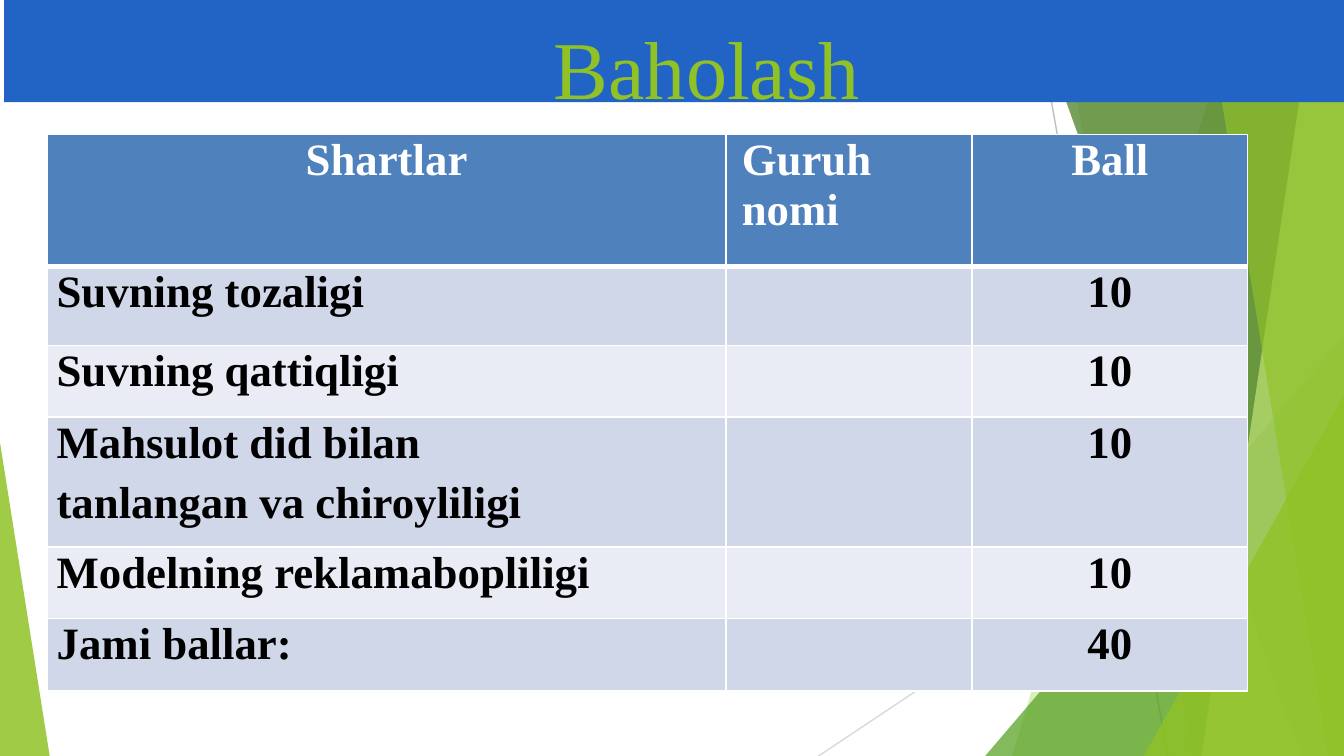
import pptx
import pptx.dml.color
import pptx.enum.shapes
import pptx.enum.text
import pptx.oxml.ns
import pptx.util
from pptx.dml.color import RGBColor
from pptx.util import Cm

FONT = "Times New Roman"
WHITE = RGBColor(0xFF, 0xFF, 0xFF)
BLACK = RGBColor(0x00, 0x00, 0x00)
BLUE = RGBColor(0x22, 0x64, 0xC6)
HEADER_BLUE = RGBColor(0x4F, 0x81, 0xBC)
BANDS = [RGBColor(0xD0, 0xD7, 0xE8), RGBColor(0xE9, 0xEC, 0xF4)]
LIME = RGBColor(0x90, 0xC2, 0x26)
GREEN = RGBColor(0x54, 0xA0, 0x21)
DARK_GREEN = RGBColor(0x3F, 0x78, 0x19)
PALE_GREEN = RGBColor(0xC0, 0xE4, 0x74)
GREY = RGBColor(0xBF, 0xBF, 0xBF)
LIGHT_GREY = RGBColor(0xD9, 0xD9, 0xD9)

WIDTH, HEIGHT = 25.4, 14.29

HEADINGS = ["Shartlar", "Guruh nomi", "Ball"]
CRITERIA = [
    ("Suvning tozaligi", "10"),
    ("Suvning qattiqligi", "10"),
    ("Mahsulot did bilan\ntanlangan va chiroyliligi", "10"),
    ("Modelning reklamabopliligi", "10"),
    ("Jami ballar:", "40"),
]
COLUMN_WIDTHS = [12.83, 4.65, 5.21]
ROW_HEIGHTS = [2.49, 1.5, 1.35, 2.46, 1.35, 1.37]


def add_child(parent, tag, **attributes):
    child = parent.makeelement(pptx.oxml.ns.qn(tag), attributes)
    parent.append(child)
    return child


def paint(shape, color, opacity=100):
    shape.shadow.inherit = False
    shape.line.fill.background()
    shape.fill.solid()
    shape.fill.fore_color.rgb = color
    if opacity < 100:
        color_element = shape.element.spPr.find(".//" + pptx.oxml.ns.qn("a:srgbClr"))
        add_child(color_element, "a:alpha", val=str(opacity * 1000))


def add_line(slide, x1, y1, x2, y2, color):
    line = slide.shapes.add_connector(
        pptx.enum.shapes.MSO_CONNECTOR.STRAIGHT, Cm(x1), Cm(y1), Cm(x2), Cm(y2))
    line.line.color.rgb = color
    line.line.width = pptx.util.Pt(0.75)
    add_child(line.element.spPr, "a:effectLst")


def add_wedge(slide, top_x, bottom_x, color, opacity):
    """Full-height panel with a slanted left side, reaching the right slide edge."""
    builder = slide.shapes.build_freeform(Cm(top_x), Cm(0))
    corners = [(WIDTH, 0), (WIDTH, HEIGHT), (bottom_x, HEIGHT)]
    builder.add_line_segments([(Cm(x), Cm(y)) for x, y in corners])
    paint(builder.convert_to_shape(), color, opacity)


def add_triangle(slide, left, top, width, apex, color, opacity):
    """Triangle standing on the bottom slide edge; apex is 0 for left, 1 for right."""
    triangle = slide.shapes.add_shape(
        pptx.enum.shapes.MSO_SHAPE.ISOSCELES_TRIANGLE,
        Cm(left), Cm(top), Cm(width), Cm(HEIGHT - top))
    triangle.adjustments[0] = apex
    paint(triangle, color, opacity)


def add_backdrop(slide):
    add_line(slide, 19.53, 0, 22.07, HEIGHT, GREY)
    add_line(slide, WIDTH, 7.67, 15.47, HEIGHT, LIGHT_GREY)
    add_wedge(slide, 23.39, 19.13, LIME, 30)
    add_wedge(slide, 20.02, 22.53, LIME, 20)
    add_triangle(slide, 18.62, 6.35, 6.78, 1, GREEN, 72)
    add_wedge(slide, 19.46, 24.59, DARK_GREEN, 70)
    add_wedge(slide, 24.84, 22.71, PALE_GREEN, 70)
    add_wedge(slide, 22.78, 25.1, LIME, 65)
    add_triangle(slide, 21.62, 7.47, 3.78, 1, LIME, 80)
    add_triangle(slide, 0, 8.36, 0.94, 0, LIME, 85)


def format_paragraph(paragraph, size, color, bold, space_before):
    paragraph.space_before = pptx.util.Pt(space_before)
    for run in paragraph.runs:
        run.font.name = FONT
        run.font.size = pptx.util.Pt(size)
        run.font.bold = bold
        run.font.color.rgb = color


def set_borders(cell, top, bottom):
    properties = cell._tc.get_or_add_tcPr()
    for side, points in (("L", 1), ("R", 1), ("T", top), ("B", bottom)):
        border = add_child(properties, "a:ln" + side, w=str(pptx.util.Pt(points)))
        fill = add_child(border, "a:solidFill")
        add_child(fill, "a:srgbClr", val=str(WHITE))


def fill_cell(cell, text, row, column):
    is_header = row == 0
    set_borders(cell, 3 if row == 1 else 1, 3 if is_header else 1)
    cell.fill.solid()
    cell.fill.fore_color.rgb = HEADER_BLUE if is_header else BANDS[(row - 1) % 2]
    cell.margin_left = cell.margin_right = cell.margin_bottom = 0
    cell.margin_top = Cm(0.03)
    if not text:
        return
    cell.text_frame.text = text
    centred = column == 2 or (is_header and column == 0)
    if not centred:
        cell.margin_left = Cm(0.3 if is_header else 0.18)
    if is_header and column == 1:
        cell.margin_right = Cm(0.8)
    for index, paragraph in enumerate(cell.text_frame.paragraphs):
        format_paragraph(paragraph, 24, WHITE if is_header else BLACK, True,
                         5.7 if index else 1.3)
        if centred:
            paragraph.alignment = pptx.enum.text.PP_ALIGN.CENTER


def add_score_table(slide):
    rows = [HEADINGS] + [[name, "", score] for name, score in CRITERIA]
    table = slide.shapes.add_table(
        len(rows), len(HEADINGS), Cm(0.89), Cm(2.54),
        Cm(sum(COLUMN_WIDTHS)), Cm(sum(ROW_HEIGHTS))).table
    for column, width in zip(table.columns, COLUMN_WIDTHS):
        column.width = Cm(width)
    for row, height in zip(table.rows, ROW_HEIGHTS):
        row.height = Cm(height)
    for row, texts in enumerate(rows):
        for column, text in enumerate(texts):
            fill_cell(table.cell(row, column), text, row, column)


def add_title_band(slide):
    band = slide.shapes.add_shape(
        pptx.enum.shapes.MSO_SHAPE.RECTANGLE, Cm(0.08), Cm(0), Cm(25.32), Cm(1.93))
    paint(band, BLUE)


def add_title(slide, text):
    title = slide.shapes.add_textbox(Cm(5.51), Cm(0.3), Cm(12.6), Cm(1.9))
    frame = title.text_frame
    frame.word_wrap = True
    frame.margin_left = Cm(3.1)
    frame.margin_right = frame.margin_bottom = 0
    frame.margin_top = Cm(0.03)
    frame.text = text
    paragraph = frame.paragraphs[0]
    paragraph.alignment = pptx.enum.text.PP_ALIGN.CENTER
    format_paragraph(paragraph, 44, LIME, False, 0.8)


def main():
    presentation = pptx.Presentation()
    presentation.slide_width = Cm(WIDTH)
    presentation.slide_height = Cm(HEIGHT)
    slide = presentation.slides.add_slide(presentation.slide_layouts[6])
    add_backdrop(slide)
    add_score_table(slide)
    add_title_band(slide)
    add_title(slide, "Baholash")
    presentation.save("out.pptx")


if __name__ == "__main__":
    main()
